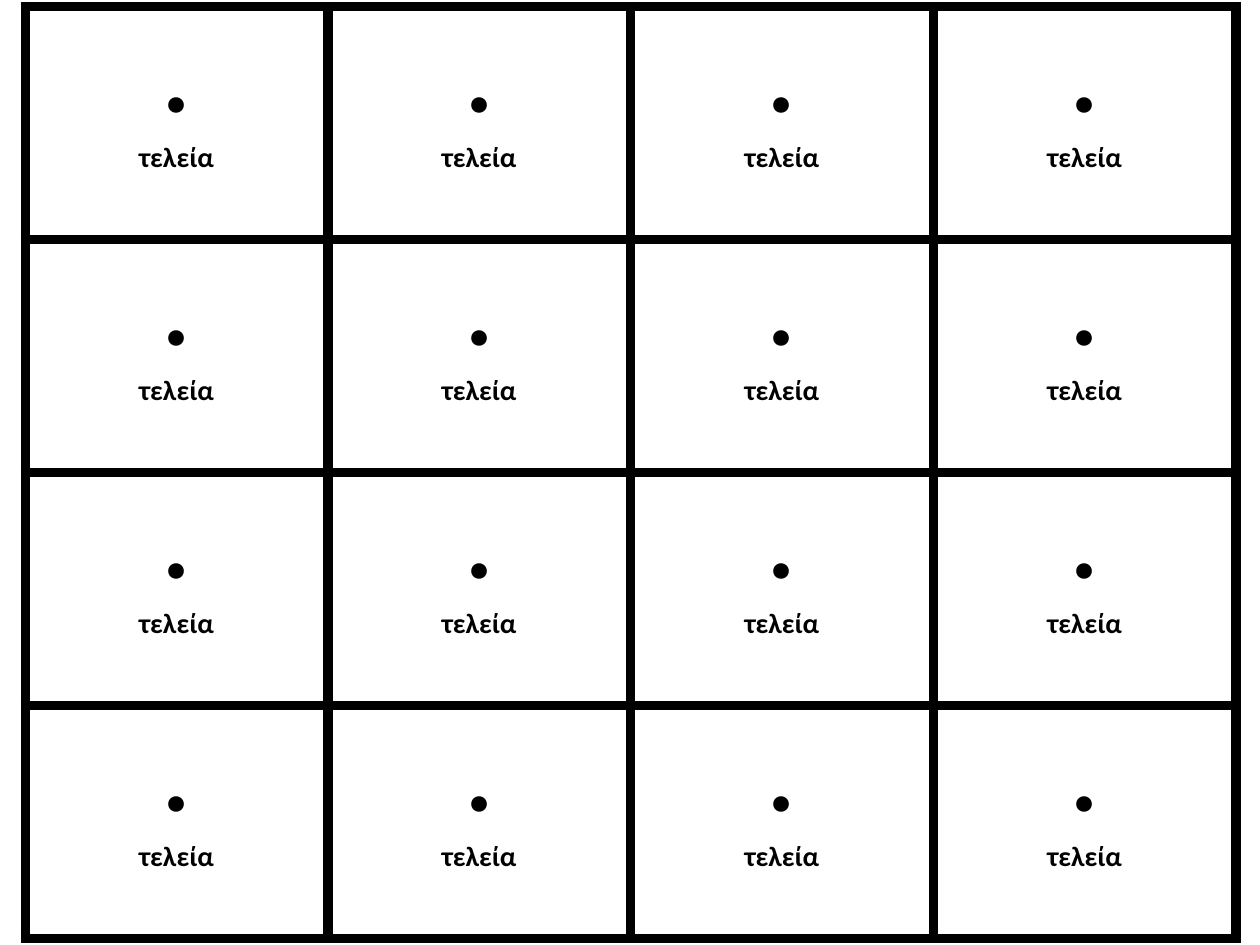
from lxml.etree import SubElement
from pptx import Presentation
from pptx.dml.color import RGBColor
from pptx.enum.text import MSO_ANCHOR as Anchor, PP_ALIGN as Align
from pptx.oxml.ns import qn
from pptx.util import Inches, Pt

BLACK = RGBColor(0x00, 0x00, 0x00)
FONT = "Calibri"
GRID_SIZE = 4
CARD_LINES = [(".", 60), ("τελεία", 16)]
BORDER_WIDTH = Pt(6)


def add_borders(cell):
    """Draw a solid black line on each side of a cell."""
    properties = cell._tc.get_or_add_tcPr()
    for side in ("a:lnL", "a:lnR", "a:lnT", "a:lnB"):
        line = SubElement(properties, qn(side), w=str(BORDER_WIDTH))
        fill = SubElement(line, qn("a:solidFill"))
        SubElement(fill, qn("a:srgbClr"), val=str(BLACK))


def add_line(para, text, size):
    """Write one centred bold line."""
    para.alignment = Align.CENTER
    span = para.add_run()
    span.text = text
    span.font.name = FONT
    span.font.size = Pt(size)
    span.font.bold = True
    span.font.color.rgb = BLACK


def fill_card(cell):
    """Format a cell as a card with a punctuation mark above its name."""
    add_borders(cell)
    cell.fill.background()
    cell.vertical_anchor = Anchor.TOP
    frame = cell.text_frame
    for index, (text, size) in enumerate(CARD_LINES):
        para = frame.add_paragraph() if index else frame.paragraphs[0]
        add_line(para, text, size)


def add_card_grid(page):
    """Add the table of equal cards."""
    grid = page.shapes.add_table(
        GRID_SIZE, GRID_SIZE, Inches(0.2), Inches(0.05), Inches(9.61), Inches(7.4)
    ).table
    grid.first_row = False
    grid.horz_banding = False
    for cell in grid.iter_cells():
        fill_card(cell)


def main():
    """Build the sheet of cards."""
    deck = Presentation()
    deck.slide_width = Inches(10)
    deck.slide_height = Inches(7.5)
    page = deck.slides.add_slide(deck.slide_layouts[6])
    add_card_grid(page)
    deck.save("out.pptx")


if __name__ == "__main__":
    main()
